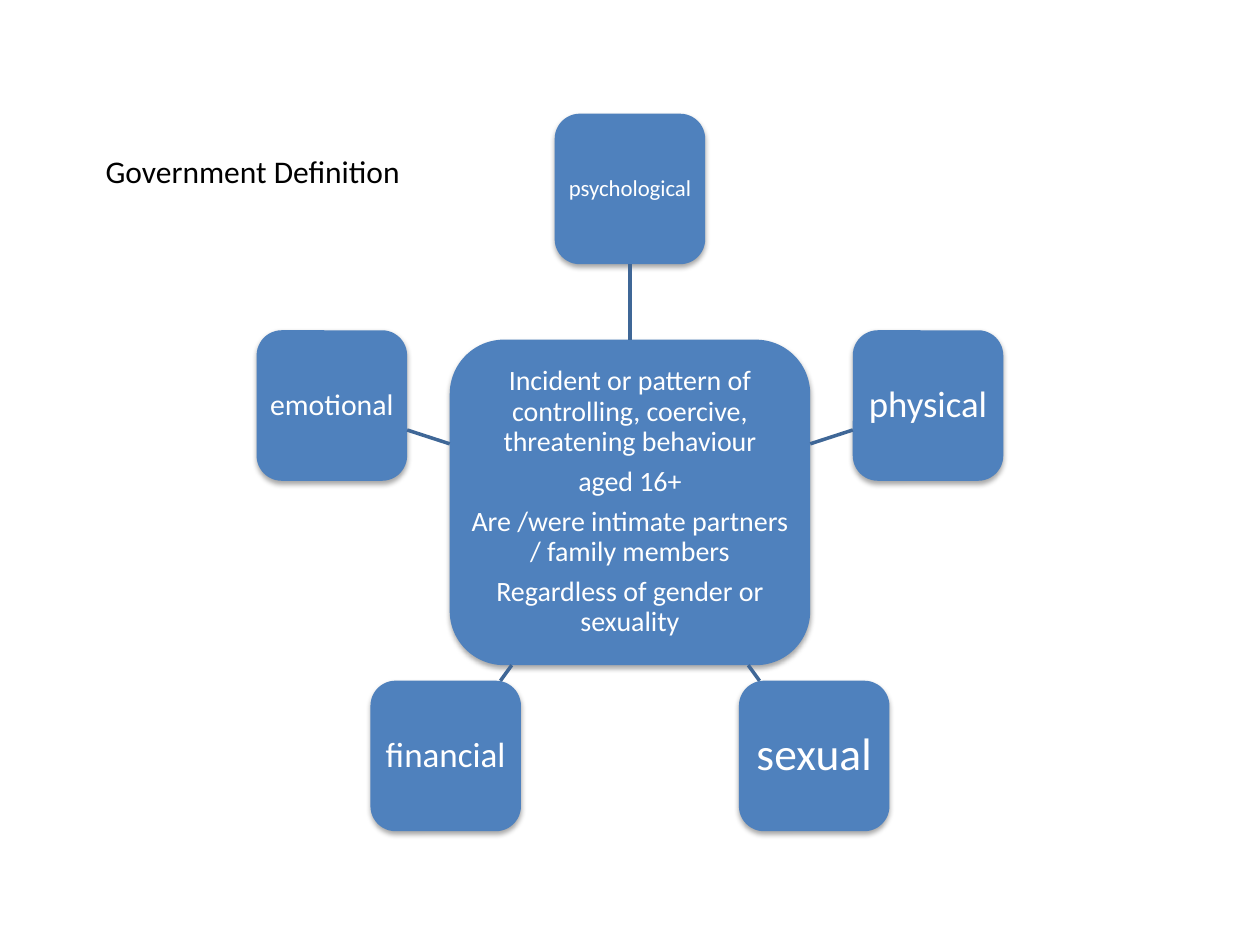
from math import cos, pi, sin

from lxml.etree import SubElement
from pptx import Presentation
from pptx.dml.color import RGBColor
from pptx.enum.shapes import MSO_CONNECTOR, MSO_SHAPE
from pptx.enum.text import MSO_ANCHOR, PP_ALIGN
from pptx.oxml.ns import qn
from pptx.util import Pt

BLUE = RGBColor(0x4F, 0x81, 0xBD)
SPOKE = RGBColor(0x3F, 0x67, 0x97)
WHITE = RGBColor(0xFF, 0xFF, 0xFF)
BLACK = RGBColor(0, 0, 0)

HUB_W, HUB_H = 206, 186
NODE = 86
HUB_TEXT = [
    "Incident or pattern of controlling, coercive, threatening behaviour",
    "aged 16+",
    "Are /were intimate partners / family members",
    "Regardless of gender or sexuality",
]
# Clockwise from the top, with text size
NODES = [("psychological", 13), ("physical", 21), ("sexual", 26),
         ("financial", 20), ("emotional", 17)]


def write(tf, lines, size, color, align=PP_ALIGN.LEFT, spacing=1.0, after=0):
    for i, line in enumerate(lines):
        p = tf.paragraphs[0] if i == 0 else tf.add_paragraph()
        p.alignment = align
        p.line_spacing = spacing
        p.space_after = Pt(after)
        r = p.add_run()
        r.text = line
        r.font.name = "Calibri"
        r.font.size = Pt(size)
        r.font.color.rgb = color


def add_shadow(sp):
    effects = sp._element.spPr.find(qn("a:effectLst"))
    shadow = SubElement(effects, qn("a:outerShdw"), blurRad=str(Pt(3.1)),
                        dist=str(Pt(1.8)), dir="5400000", rotWithShape="0")
    color = SubElement(shadow, qn("a:srgbClr"), val="000000")
    SubElement(color, qn("a:alpha"), val="35000")


def add_block(slide, cx, cy, w, h, lines, size):
    """Rounded block centred on (cx, cy)."""
    sp = slide.shapes.add_shape(MSO_SHAPE.ROUNDED_RECTANGLE, Pt(cx - w / 2),
                                Pt(cy - h / 2), Pt(w), Pt(h))
    sp.shadow.inherit = False
    add_shadow(sp)
    sp.fill.solid()
    sp.fill.fore_color.rgb = BLUE
    sp.line.fill.background()
    tf = sp.text_frame
    tf.word_wrap = True
    tf.vertical_anchor = MSO_ANCHOR.MIDDLE
    tf.margin_left = tf.margin_right = Pt(size * 0.2)
    tf.margin_top = tf.margin_bottom = Pt(size * 0.2)
    write(tf, lines, size, WHITE, align=PP_ALIGN.CENTER, spacing=0.9,
          after=size * 0.35)
    return sp


def add_spoke(slide, x1, y1, x2, y2):
    line = slide.shapes.add_connector(MSO_CONNECTOR.STRAIGHT, Pt(x1), Pt(y1),
                                      Pt(x2), Pt(y2))
    line.line.color.rgb = SPOKE
    line.line.width = Pt(2)
    SubElement(line._element.spPr, qn("a:effectLst"))
    return line


def edge_distance(w, h, dx, dy):
    """Distance from a box's centre to its edge along the direction (dx, dy)."""
    return min(half / abs(d) for half, d in ((w / 2, dx), (h / 2, dy))
               if abs(d) > 1e-6)


def add_radial(slide, left, top, width, height):
    """Hub with nodes evenly spaced on a circle that touches the box's top."""
    radius = (height - NODE) / (1 + cos(pi / len(NODES)))
    cx, cy = left + width / 2, top + NODE / 2 + radius
    hub = add_block(slide, cx, cy, HUB_W, HUB_H, HUB_TEXT, 16)
    for i, (label, size) in enumerate(NODES):
        angle = 2 * pi * i / len(NODES)
        dx, dy = sin(angle), -cos(angle)
        node = add_block(slide, cx + radius * dx, cy + radius * dy,
                         NODE, NODE, [label], size)
        start = edge_distance(HUB_W, HUB_H, dx, dy)
        end = radius - edge_distance(NODE, NODE, dx, dy)
        spoke = add_spoke(slide, cx + start * dx, cy + start * dy,
                          cx + end * dx, cy + end * dy)
        if i == 0:
            spoke.begin_connect(hub, 0)
            spoke.end_connect(node, 2)


def add_title(slide, left, top, width, height):
    box = slide.shapes.add_textbox(Pt(left), Pt(top), Pt(width), Pt(height))
    box.text_frame.word_wrap = False
    write(box.text_frame, ["Government Definition"], 18, BLACK)


def main():
    prs = Presentation()
    prs.slide_width, prs.slide_height = Pt(720), Pt(540)
    slide = prs.slides.add_slide(prs.slide_layouts[6])
    # Diagram
    add_radial(slide, 147, 65, 426, 410)
    # Heading
    add_title(slide, 53.3, 83.5, 185, 29)
    prs.save("out.pptx")


if __name__ == "__main__":
    main()
